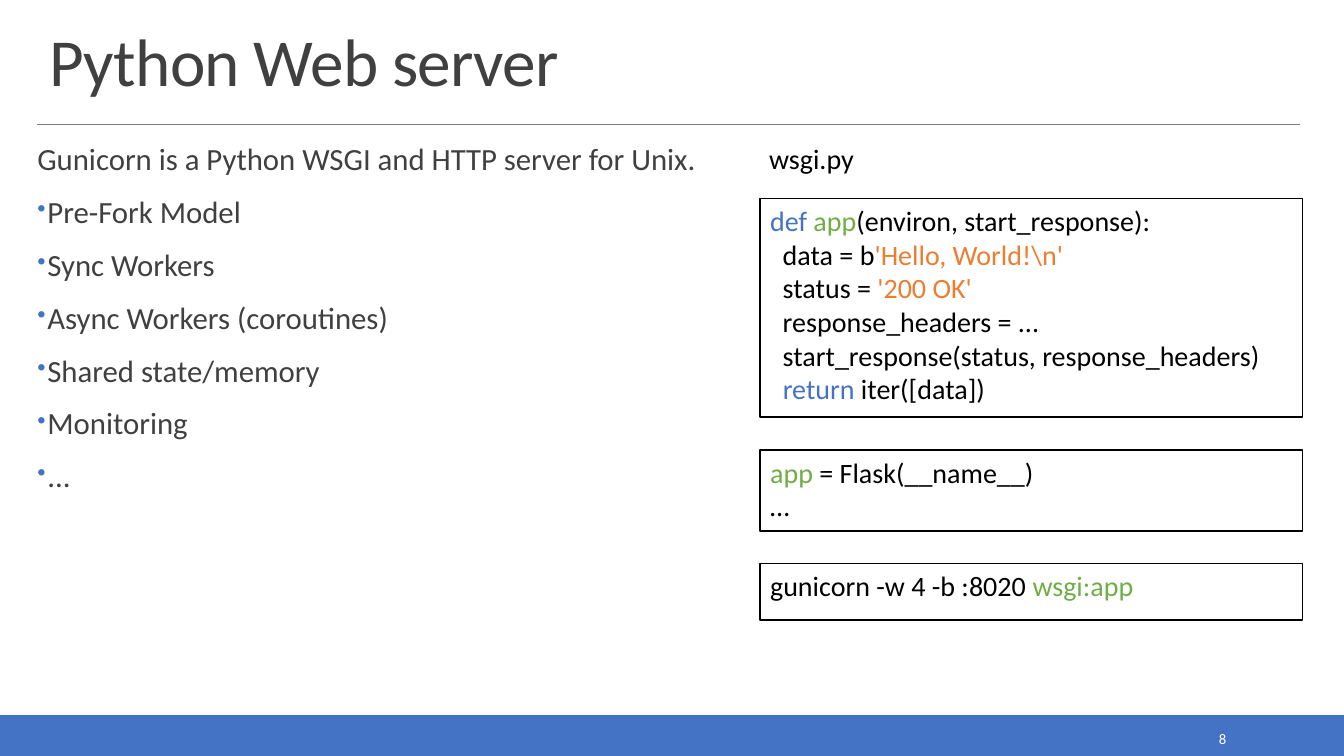
import dataclasses

import lxml.etree
import pptx
import pptx.dml.color
import pptx.enum.shapes
import pptx.enum.text
import pptx.oxml.ns
import pptx.util

ALIGN = pptx.enum.text.PP_ALIGN
ANCHOR = pptx.enum.text.MSO_ANCHOR


@dataclasses.dataclass(frozen=True)
class Theme:
    font: str = "Calibri"
    ink: str = "404040"
    black: str = "000000"
    white: str = "FFFFFF"
    rule: str = "808080"
    blue: str = "4472C4"
    green: str = "70AD47"
    orange: str = "ED7D31"
    title_size: float = 48
    body_size: float = 22
    code_size: float = 20
    number_size: float = 10.5
    outline: float = 1.25
    hairline: float = 0.5


def color(value):
    return pptx.dml.color.RGBColor.from_string(value)


def add_child(parent, tag, **attributes):
    return lxml.etree.SubElement(parent, pptx.oxml.ns.qn(tag), **attributes)


class Page:
    """Holds the theme and the slide; lengths are percent of the slide's size."""

    def __init__(self, deck, theme):
        self.theme = theme
        self.width, self.height = deck.slide_width, deck.slide_height
        self.shapes = deck.slides.add_slide(deck.slide_layouts[6]).shapes

    def place(self, left, top, width, height):
        return [round(share * side / 100) for share, side in
                ((left, self.width), (top, self.height),
                 (width, self.width), (height, self.height))]

    def style(self, para, size, tint, align=ALIGN.LEFT):
        para.alignment = align
        para.font.name = self.theme.font
        para.font.size = pptx.util.Pt(size)
        if tint:
            para.font.color.rgb = color(tint)

    def rectangle(self, area, line, fill=None):
        box = self.shapes.add_shape(
            pptx.enum.shapes.MSO_SHAPE.RECTANGLE, *self.place(*area))
        box.shadow.inherit = False
        if fill:
            box.fill.solid()
            box.fill.fore_color.rgb = color(fill)
        else:
            box.fill.background()
        box.line.color.rgb = color(line)
        box.line.width = pptx.util.Pt(self.theme.outline)
        return box

    def rule(self, left, right, top):
        x, y, length, _ = self.place(left, top, right - left, 0)
        line = self.shapes.add_connector(
            pptx.enum.shapes.MSO_CONNECTOR.STRAIGHT, x, y, x + length, y)
        line.line.color.rgb = color(self.theme.rule)
        line.line.width = pptx.util.Pt(self.theme.hairline)
        add_child(line._element.spPr, "a:effectLst")

    def text(self, area, words, size, tint, align=ALIGN.LEFT, anchor=ANCHOR.TOP):
        box = self.shapes.add_textbox(*self.place(*area))
        frame = box.text_frame
        frame.word_wrap = True
        frame.vertical_anchor = anchor
        frame.text = words
        self.style(frame.paragraphs[0], size, tint, align)
        return frame

    def title(self, area, words):
        frame = self.text(area, words, self.theme.title_size, self.theme.ink,
                          anchor=ANCHOR.BOTTOM)
        para = frame.paragraphs[0]
        para.line_spacing = 0.85
        para.runs[0].font._element.set("spc", "-50")

    def bullets(self, area, lead, items):
        frame = self.text(area, lead, self.theme.body_size, self.theme.ink)
        frame.margin_left = frame.margin_right = 0
        frame.margin_top = frame.margin_bottom = pptx.util.Inches(0.04)
        for item in items:
            para = frame.add_paragraph()
            para.text = item
            para.space_before = pptx.util.Pt(12)
            self.bullet(para)
            self.style(para, self.theme.body_size, self.theme.ink)
        for para in frame.paragraphs:
            para.line_spacing = 0.9
            para.space_after = pptx.util.Pt(2)

    def bullet(self, para):
        indent = pptx.util.Inches(0.1)
        properties = para._p.get_or_add_pPr()
        properties.set("marL", str(indent))
        properties.set("indent", str(-indent))
        tint = add_child(properties, "a:buClr")
        add_child(tint, "a:srgbClr", val=self.theme.blue)
        add_child(properties, "a:buSzPct", val="80000")
        add_child(properties, "a:buChar", char="•")

    def code(self, area, lines):
        """Each line is a list of (words, colour) spans."""
        frame = self.rectangle(area, self.theme.black).text_frame
        frame.word_wrap = True
        frame.vertical_anchor = ANCHOR.TOP
        for index, spans in enumerate(lines):
            para = frame.add_paragraph() if index else frame.paragraphs[0]
            for words, tint in spans:
                span = para.add_run()
                span.text = words
                span.font.color.rgb = color(tint)
            self.style(para, self.theme.code_size, None)


def main():
    deck = pptx.Presentation()
    deck.slide_width = pptx.util.Inches(13.33)
    deck.slide_height = pptx.util.Inches(7.5)
    theme = Theme()
    page = Page(deck, theme)
    black, blue = theme.black, theme.blue
    green, orange = theme.green, theme.orange

    # Footer band and title
    page.rectangle((0, 94.67, 100, 5.33), blue, fill=blue)
    page.text((81.25, 95.87, 10.73, 3.73), "8", theme.number_size, theme.white,
              ALIGN.RIGHT, ANCHOR.MIDDLE)
    page.rule(2.78, 96.7, 16.4)
    page.title((2.93, 2.67, 93.92, 11.2), "Python Web server")

    # Server features
    page.bullets(
        (2.78, 18.53, 52.59, 73.47),
        "Gunicorn is a Python WSGI and HTTP server for Unix.",
        ["Pre-Fork Model", "Sync Workers", "Async Workers (coroutines)",
         "Shared state/memory", "Monitoring", "..."])

    # Code listings, stacked with equal gaps
    page.text((56.49, 18, 8.85, 5.87), "wsgi.py", theme.code_size, black)
    wsgi_app = [
        [("def ", blue), ("app", green), ("(environ, start_response):", black)],
        [("  data = b", black), (r"'Hello, World!\n'", orange)],
        [("  status = ", black), ("'200 OK'", orange)],
        [("  response_headers = ...", black)],
        [("  start_response(status, response_headers)", black)],
        [("  ", black), ("return", blue), (" iter([data])", black)],
    ]
    flask_app = [
        [("app", green), (" = Flask(__name__)", black)],
        [("…", black)],
    ]
    command = [[("gunicorn -w 4 -b :8020 ", black), ("wsgi:app", green)]]
    top, gap = 26.27, 4.33
    for height, lines in ((28.93, wsgi_app), (10.67, flask_app), (7.47, command)):
        page.code((56.56, top, 40.36, height), lines)
        top += height + gap

    deck.save("out.pptx")


if __name__ == "__main__":
    main()
